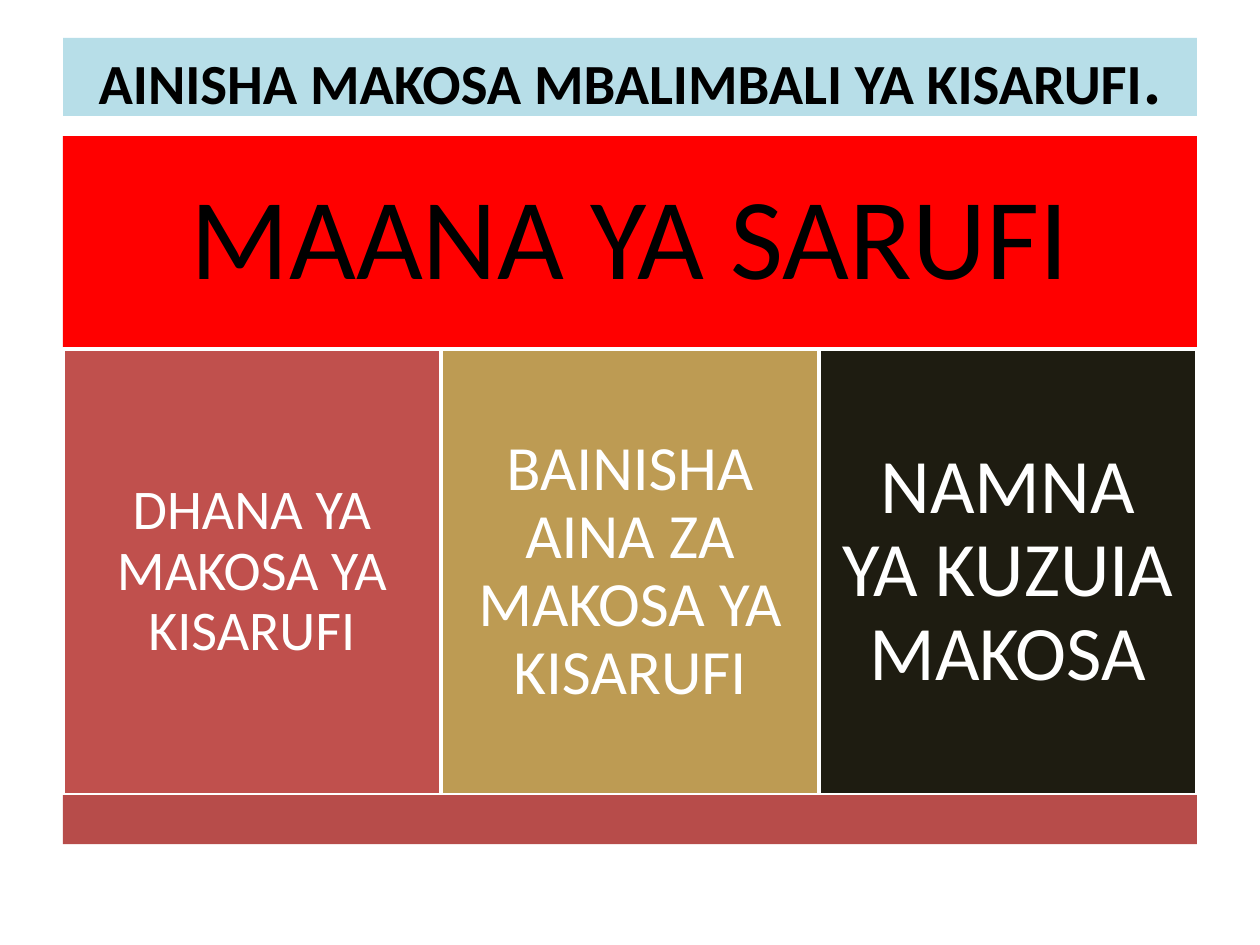
from pptx import Presentation
from pptx.dml.color import RGBColor
from pptx.enum.shapes import MSO_SHAPE
from pptx.enum.text import MSO_ANCHOR, MSO_AUTO_SIZE, PP_ALIGN
from pptx.util import Pt

BLACK = RGBColor(0x00, 0x00, 0x00)
WHITE = RGBColor(0xFF, 0xFF, 0xFF)
PALE_BLUE = RGBColor(0xB7, 0xDE, 0xE8)
RED = RGBColor(0xFF, 0x00, 0x00)
BRICK = RGBColor(0xC0, 0x50, 0x4D)
DARK_BRICK = RGBColor(0xB7, 0x4C, 0x4A)
GOLD = RGBColor(0xBD, 0x9B, 0x53)
DARK = RGBColor(0x1E, 0x1C, 0x11)

TITLE = [("AINISHA MAKOSA MBALIMBALI YA KISARUFI", 32.4), (".", 39.6)]
# text, size, inset, fill
HEADING = ("MAANA YA SARUFI", 66, 20, RED)
COLUMNS = [
    ("DHANA YA MAKOSA YA KISARUFI", 32, 9.5, BRICK),
    ("BAINISHA AINA ZA MAKOSA YA KISARUFI", 36, 10.8, GOLD),
    ("NAMNA YA KUZUIA MAKOSA", 44, 13, DARK),
]

LEFT, WIDTH = 36, 648
TITLE_TOP, TITLE_H = 21.6, 44.6
HEAD_TOP, HEAD_H = 77.8, 121
COL_TOP, COL_H = 199.4, 255
BASE_H = 28


def add_block(s, left, top, width, height, fill):
    sp = s.shapes.add_shape(MSO_SHAPE.RECTANGLE, Pt(left), Pt(top), Pt(width), Pt(height))
    sp.shadow.inherit = False
    sp.fill.solid()
    sp.fill.fore_color.rgb = fill
    sp.line.fill.background()
    return sp


def write(sp, text, size, inset, color):
    tf = sp.text_frame
    tf.word_wrap = True
    tf.vertical_anchor = MSO_ANCHOR.MIDDLE
    tf.margin_left = tf.margin_right = tf.margin_top = tf.margin_bottom = Pt(inset)
    p = tf.paragraphs[0]
    p.text = text
    p.alignment = PP_ALIGN.CENTER
    p.line_spacing = 0.9
    p.font.name = "Calibri"
    p.font.size = Pt(size)
    p.font.color.rgb = color


prs = Presentation()
prs.slide_width, prs.slide_height = Pt(720), Pt(540)
s = prs.slides.add_slide(prs.slide_layouts[5])

title = s.shapes.title
title.left, title.top, title.width, title.height = Pt(LEFT), Pt(TITLE_TOP), Pt(WIDTH), Pt(TITLE_H)
title.fill.solid()
title.fill.fore_color.rgb = PALE_BLUE
tf = title.text_frame
tf.auto_size = MSO_AUTO_SIZE.NONE
tf.vertical_anchor = MSO_ANCHOR.MIDDLE
p = tf.paragraphs[0]
p.alignment = PP_ALIGN.CENTER
p.font.name = "Calibri"
p.font.bold = True
p.font.color.rgb = BLACK
for text, size in TITLE:
    r = p.add_run()
    r.text = text
    r.font.size = Pt(size)

text, size, inset, fill = HEADING
write(add_block(s, LEFT, HEAD_TOP, WIDTH, HEAD_H, fill), text, size, inset, BLACK)

col_w = WIDTH / len(COLUMNS)
for i, (text, size, inset, fill) in enumerate(COLUMNS):
    sp = add_block(s, LEFT + i * col_w, COL_TOP, col_w, COL_H, fill)
    sp.line.color.rgb = WHITE
    sp.line.width = Pt(2)
    write(sp, text, size, inset, WHITE)

add_block(s, LEFT, COL_TOP + COL_H, WIDTH, BASE_H, DARK_BRICK)

prs.save("out.pptx")
